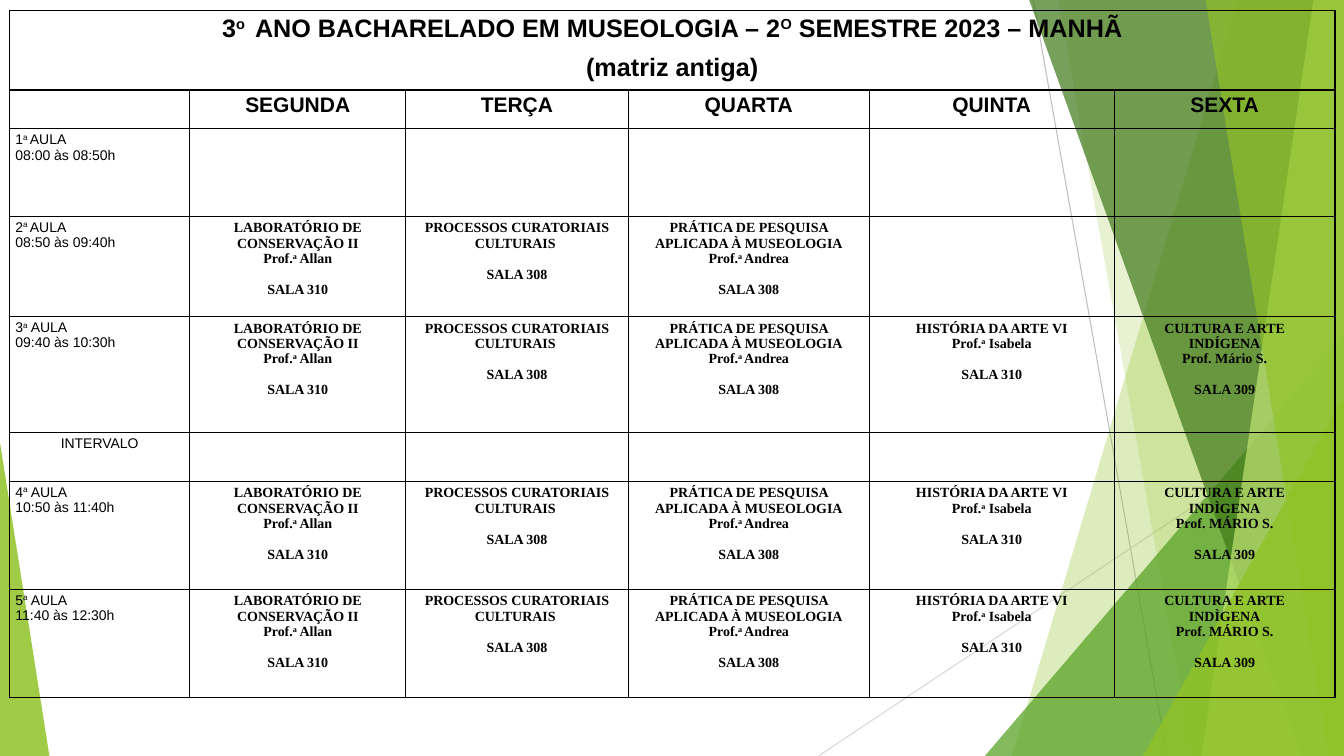
from dataclasses import dataclass

from lxml.etree import SubElement
from pptx import Presentation
from pptx.dml.color import RGBColor
from pptx.enum.shapes import MSO_CONNECTOR as Connector, MSO_SHAPE as Shape
from pptx.enum.text import PP_ALIGN as Align
from pptx.oxml.ns import qn
from pptx.util import Emu, Inches, Pt

BLACK = RGBColor(0x00, 0x00, 0x00)
LIME = RGBColor(0x90, 0xC2, 0x26)
PALE_LIME = RGBColor(0xC0, 0xE4, 0x74)
GREEN = RGBColor(0x54, 0xA0, 0x21)
DARK_GREEN = RGBColor(0x3F, 0x78, 0x19)
GREY = RGBColor(0xBF, 0xBF, 0xBF)
LIGHT_GREY = RGBColor(0xD9, 0xD9, 0xD9)

SLIDE_WIDTH, SLIDE_HEIGHT = Inches(13.333), Inches(7.5)
TABLE_LEFT, TABLE_TOP = 0.7, 1.4
COLUMN_SHARES = (13.43, 16.05, 16.57, 17.93, 18.23, 16.43)
ROW_SHARES = (10.5, 4.85, 11.6, 13.25, 15.35, 6.45, 14.3, 14.3)


@dataclass(frozen=True)
class Ray:
    start: tuple[float, float]
    end: tuple[float, float]
    color: RGBColor


@dataclass(frozen=True)
class Band:
    top_left: float
    bottom_left: float
    color: RGBColor
    opacity: int


@dataclass(frozen=True)
class Wedge:
    left: float
    top: float
    width: float
    apex: float
    color: RGBColor
    opacity: int


@dataclass(frozen=True)
class TextStyle:
    font: str
    size: int
    bold: bool
    align: Align = Align.CENTER
    space_after: int = 0
    side_inset: float = 0.07
    end_inset: float = 0.04


@dataclass(frozen=True)
class Course:
    lines: tuple[str, ...]
    room: str


@dataclass(frozen=True)
class Lesson:
    label: tuple[str, ...]
    courses: tuple[Course | None, ...] = ()


DECORATION = (
    Ray((76.88, 0), (86.85, 100), GREY),
    Ray((100, 53.73), (60.9, 100), LIGHT_GREY),
    Band(92.1, 75.3, LIME, 30),
    Band(78.75, 88.73, LIME, 20),
    Wedge(73.28, 44.4, 26.72, 1, GREEN, 72),
    Band(76.58, 96.83, DARK_GREEN, 70),
    Band(97.73, 89.4, PALE_LIME, 70),
    Band(89.7, 98.85, LIME, 65),
    Wedge(85.05, 52.4, 14.95, 1, LIME, 80),
    Wedge(0, 58.53, 3.68, 0, LIME, 85),
)

TITLE_STYLE = TextStyle("Arial", 18, True, space_after=8)
DAY_STYLE = TextStyle("Arial", 15, True)
LABEL_STYLE = TextStyle("Arial", 10, False, Align.LEFT, side_inset=0.06, end_inset=0.03)
BREAK_STYLE = TextStyle("Arial", 10, False, side_inset=0.06, end_inset=0.03)
COURSE_STYLE = TextStyle("Times New Roman", 10, True)
ROOM_GAP = Pt(11)

TITLE = ("3^o ^ ANO BACHARELADO EM MUSEOLOGIA – 2^O^ SEMESTRE 2023 – MANHÃ", "(matriz antiga)")
DAYS = ("SEGUNDA", "TERÇA", "QUARTA", "QUINTA", "SEXTA")

CONSERVATION = Course(("LABORATÓRIO DE CONSERVAÇÃO II", "Prof.^a^ Allan"), "SALA 310")
CURATING = Course(("PROCESSOS CURATORIAIS CULTURAIS ",), "SALA 308")
RESEARCH = Course(("PRÁTICA DE PESQUISA APLICADA À MUSEOLOGIA", "Prof.^a ^Andrea"), "SALA 308")
ART_HISTORY = Course(("HISTÓRIA DA ARTE VI", "Prof.^a^ Isabela"), "SALA 310")
INDIGENOUS = Course(("CULTURA E ARTE", "INDÍGENA", "Prof. Mário S."), "SALA 309")
INDIGENOUS_LATE = Course(("CULTURA E ARTE", "INDÌGENA", "Prof. MÁRIO S."), "SALA 309")
EARLY_WEEK = (CONSERVATION, CURATING, RESEARCH)
LATE_LESSONS = (*EARLY_WEEK, ART_HISTORY, INDIGENOUS_LATE)

LESSONS = (
    Lesson(("1^a ^AULA", "08:00 às 08:50h")),
    Lesson(("2^a ^AULA", "08:50 às 09:40h"), EARLY_WEEK),
    Lesson(("3^a^ AULA", "09:40 às 10:30h"), (*EARLY_WEEK, ART_HISTORY, INDIGENOUS)),
    Lesson(("INTERVALO",)),
    Lesson(("4^a^ AULA", "10:50 às 11:40h"), LATE_LESSONS),
    Lesson(("5^a^ AULA", "11:40 às 12:30h"), LATE_LESSONS),
)


def across(share: float) -> Emu:
    return Emu(round(SLIDE_WIDTH * share / 100))


def down(share: float) -> Emu:
    return Emu(round(SLIDE_HEIGHT * share / 100))


def draw_ray(slide, ray: Ray) -> None:
    connector = slide.shapes.add_connector(
        Connector.STRAIGHT, across(ray.start[0]), down(ray.start[1]),
        across(ray.end[0]), down(ray.end[1]))
    connector.line.color.rgb = ray.color
    connector.line.width = Pt(0.75)
    SubElement(connector._element.spPr, qn("a:effectLst"))


def paint(shape, color: RGBColor, opacity: int) -> None:
    shape.shadow.inherit = False
    shape.line.fill.background()
    shape.fill.solid()
    shape.fill.fore_color.rgb = color
    color_element = next(shape._element.spPr.iter(qn("a:srgbClr")))
    SubElement(color_element, qn("a:alpha"), val=str(opacity * 1000))


def draw_band(slide, band: Band) -> None:
    builder = slide.shapes.build_freeform(across(band.top_left), 0)
    builder.add_line_segments(
        [(across(100), 0), (across(100), down(100)), (across(band.bottom_left), down(100))])
    paint(builder.convert_to_shape(), band.color, band.opacity)


def draw_wedge(slide, wedge: Wedge) -> None:
    shape = slide.shapes.add_shape(
        Shape.ISOSCELES_TRIANGLE, across(wedge.left), down(wedge.top),
        across(wedge.width), down(100 - wedge.top))
    shape.adjustments[0] = wedge.apex
    paint(shape, wedge.color, wedge.opacity)


def write(cell, lines: tuple[str, ...], style: TextStyle) -> None:
    cell.margin_left = cell.margin_right = Inches(style.side_inset)
    cell.margin_top = cell.margin_bottom = Inches(style.end_inset)
    frame = cell.text_frame
    for index, line in enumerate(lines):
        paragraph = frame.add_paragraph() if index else frame.paragraphs[0]
        paragraph.alignment = style.align
        paragraph.space_after = Pt(style.space_after)
        for position, piece in enumerate(line.split("^")):
            if not piece:
                continue
            run = paragraph.add_run()
            run.text = piece
            run.font.name = style.font
            run.font.size = Pt(style.size)
            run.font.bold = style.bold
            run.font.color.rgb = BLACK
            if position % 2:
                run._r.get_or_add_rPr().set("baseline", "30000")


def outline(cell) -> None:
    properties = cell._tc.get_or_add_tcPr()
    for side in ("a:lnL", "a:lnR", "a:lnT", "a:lnB"):
        border = SubElement(properties, qn(side), w=str(Pt(1)))
        fill = SubElement(border, qn("a:solidFill"))
        SubElement(fill, qn("a:srgbClr"), val=str(BLACK))
    cell.fill.background()


def draw_timetable(slide) -> None:
    table = slide.shapes.add_table(
        len(ROW_SHARES), len(COLUMN_SHARES), across(TABLE_LEFT), down(TABLE_TOP),
        across(sum(COLUMN_SHARES)), down(sum(ROW_SHARES))).table
    table.first_row = table.horz_banding = False
    for column, share in zip(table.columns, COLUMN_SHARES):
        column.width = across(share)
    for row, share in zip(table.rows, ROW_SHARES):
        row.height = down(share)
    for cell in table.iter_cells():
        outline(cell)
        write(cell, (), DAY_STYLE)
    table.cell(0, 0).merge(table.cell(0, len(DAYS)))
    write(table.cell(0, 0), TITLE, TITLE_STYLE)
    for column, day in enumerate(DAYS, start=1):
        write(table.cell(1, column), (day,), DAY_STYLE)
    for row, lesson in enumerate(LESSONS, start=2):
        style = LABEL_STYLE if len(lesson.label) > 1 else BREAK_STYLE
        write(table.cell(row, 0), lesson.label, style)
        for column, course in enumerate(lesson.courses, start=1):
            cell = table.cell(row, column)
            write(cell, (*course.lines, course.room), COURSE_STYLE)
            cell.text_frame.paragraphs[-1].space_before = ROOM_GAP


def main() -> None:
    presentation = Presentation()
    presentation.slide_width, presentation.slide_height = SLIDE_WIDTH, SLIDE_HEIGHT
    slide = presentation.slides.add_slide(presentation.slide_layouts[6])
    painters = {Ray: draw_ray, Band: draw_band, Wedge: draw_wedge}
    for item in DECORATION:
        painters[type(item)](slide, item)
    draw_timetable(slide)
    presentation.save("out.pptx")


if __name__ == "__main__":
    main()
